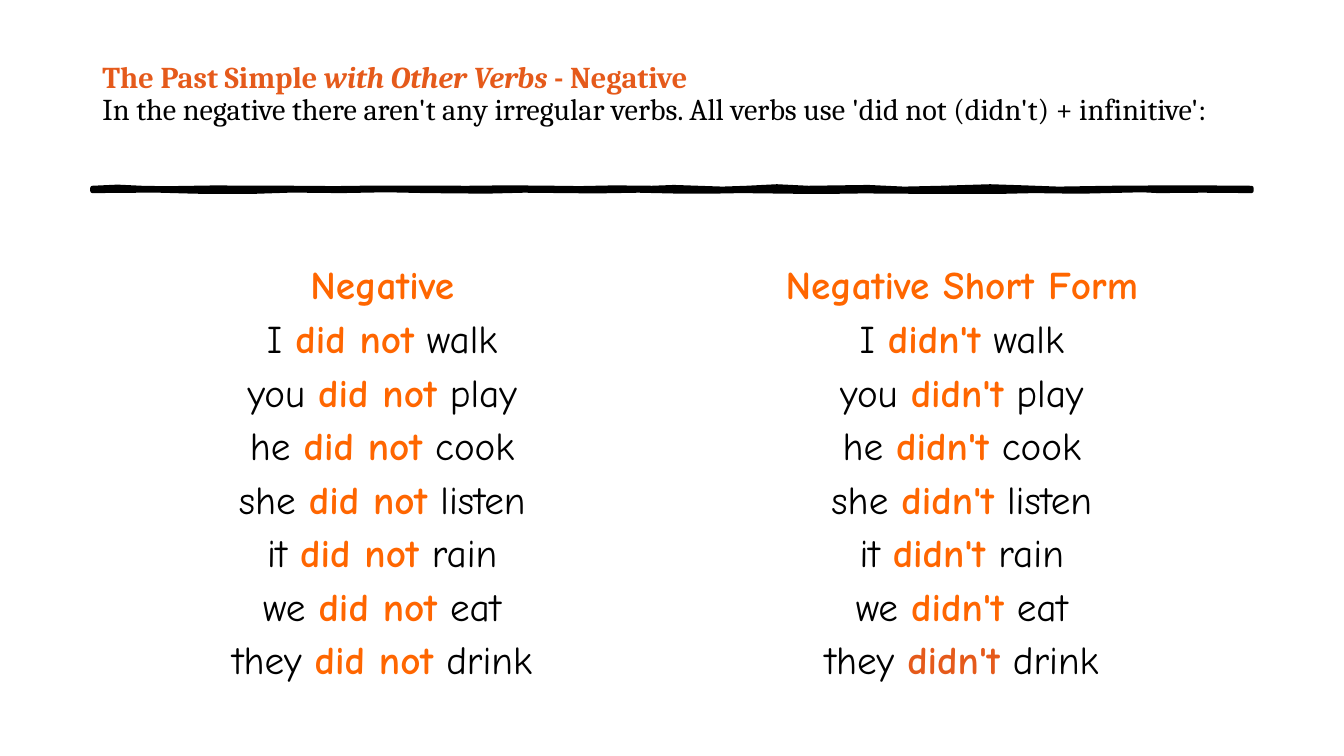
"""Build a grammar slide on the negative form of the past simple."""
from pptx import Presentation
from pptx.dml.color import RGBColor
from pptx.enum.text import MSO_ANCHOR, MSO_AUTO_SIZE, PP_ALIGN
from pptx.util import Emu, Pt

PX = 9525
MIDDLE = MSO_ANCHOR.MIDDLE
NO_AUTOFIT = MSO_AUTO_SIZE.NONE
LEFT, CENTER = PP_ALIGN.LEFT, PP_ALIGN.CENTER
TITLE_ONLY = 5

COLORS = {"heading": "E55A1B", "accent": "FF6600", "ink": "000000"}
TITLE_FONT, TABLE_FONT = "Cambria", "Comic Neue"

HEADINGS = ["Negative", "Negative Short Form"]
AUXILIARIES = ["did not", "didn't"]
SENTENCES = [
    ("I", "walk"), ("you", "play"), ("he", "cook"), ("she", "listen"),
    ("it", "rain"), ("we", "eat"), ("they", "drink"),
]

RULE_TOP = [
    (0, 0), (24, -11), (47, 0), (70, 4), (115, -3), (196, 0), (231, 3),
    (268, -2), (358, 0), (392, -4), (427, -2), (464, 3), (497, -4), (533, 0),
    (554, -8), (600, 8), (623, 0), (652, -15), (682, 0), (739, -8), (773, 8),
    (808, 0), (855, -15), (888, -4), (920, 8), (969, 0), (1040, -5), (1104, 0),
]
RULE_BOTTOM = [
    (1104, 30), (1057, 26), (1015, 30), (1000, 22), (966, 30), (940, 36),
    (897, 30), (861, 38), (792, 37), (734, 33), (704, 37), (676, 37),
    (618, 30), (590, 35), (560, 35), (520, 26), (480, 33), (411, 26),
    (375, 35), (317, 30), (280, 22), (237, 30), (190, 25), (150, 38),
    (99, 36), (60, 25), (0, 30),
]


def px(length):
    """Turn a length in px into EMU."""
    return Emu(length * PX)


def add_run(paragraph, text, font, size, color="ink", bold=False, italic=False):
    """Append a formatted run to a paragraph."""
    run = paragraph.add_run()
    run.text = text
    run.font.name = font
    run.font.size = Pt(size)
    run.font.bold = bold
    run.font.italic = italic
    run.font.color.rgb = RGBColor.from_string(COLORS[color])


def place_title(slide, left, top, width, height):
    """Fill the title placeholder with the topic and its rule."""
    title = slide.shapes.title
    title.left, title.top = px(left), px(top)
    title.width, title.height = px(width), px(height)
    frame = title.text_frame
    frame.word_wrap = True
    frame.auto_size = NO_AUTOFIT
    frame.vertical_anchor = MIDDLE
    frame.margin_bottom = px(39)
    paragraph = frame.paragraphs[0]
    paragraph.alignment = LEFT
    paragraph.line_spacing = 0.9
    style = {"font": TITLE_FONT, "size": 21.6}
    heading = {**style, "color": "heading", "bold": True}
    add_run(paragraph, "The Past Simple ", **heading)
    add_run(paragraph, "with Other Verbs ", italic=True, **heading)
    add_run(paragraph, "- Negative", **heading)
    paragraph.add_line_break()
    add_run(paragraph, "In the negative there aren't any irregular verbs. "
            "All verbs use 'did not (didn't) + infinitive':", **style)


def draw_rule(slide, left, top):
    """Draw the uneven brush line, its heights given in tenths of a px."""
    start, *outline = RULE_TOP + RULE_BOTTOM
    builder = slide.shapes.build_freeform(*start, scale=(PX, PX / 10))
    builder.add_line_segments(outline, close=True)
    rule = builder.convert_to_shape(px(left), px(top))
    rule.shadow.inherit = False
    ink = RGBColor.from_string(COLORS["ink"])
    rule.fill.solid()
    rule.fill.fore_color.rgb = ink
    rule.line.color.rgb = ink
    rule.line.width = Pt(3)


def prepare_cell(cell):
    """Clear a cell's fill, set its margins and return its paragraph."""
    cell.fill.background()
    cell.vertical_anchor = MIDDLE
    cell.margin_left = cell.margin_right = px(3)
    cell.margin_top = cell.margin_bottom = px(3)
    paragraph = cell.text_frame.paragraphs[0]
    paragraph.alignment = CENTER
    return paragraph


def add_verb_table(slide, left, top, width, row_height):
    """Set the long and short negative forms side by side."""
    row_count = len(SENTENCES) + 1
    table = slide.shapes.add_table(
        row_count, len(HEADINGS), px(left), px(top),
        px(width), px(row_height * row_count)).table
    table.first_row = table.horz_banding = False
    style = {"font": TABLE_FONT, "size": 28}
    for column, (heading, auxiliary) in enumerate(zip(HEADINGS, AUXILIARIES)):
        paragraph = prepare_cell(table.cell(0, column))
        add_run(paragraph, heading, color="accent", bold=True, **style)
        for row, (pronoun, verb) in enumerate(SENTENCES, start=1):
            is_last = (row, column) == (len(SENTENCES), len(HEADINGS) - 1)
            paragraph = prepare_cell(table.cell(row, column))
            add_run(paragraph, f"{pronoun} ", **style)
            add_run(paragraph, auxiliary, bold=True,
                    color="heading" if is_last else "accent", **style)
            add_run(paragraph, f" {verb}", **style)


def main():
    """Build the slide and save it."""
    deck = Presentation()
    deck.slide_width, deck.slide_height = px(1280), px(720)
    slide = deck.slides.add_slide(deck.slide_layouts[TITLE_ONLY])
    draw_rule(slide, 88, 179)
    place_title(slide, 88, 38, 1104, 139)
    add_verb_table(slide, 88, 248, 1104, 51)
    deck.save("out.pptx")


if __name__ == "__main__":
    main()
